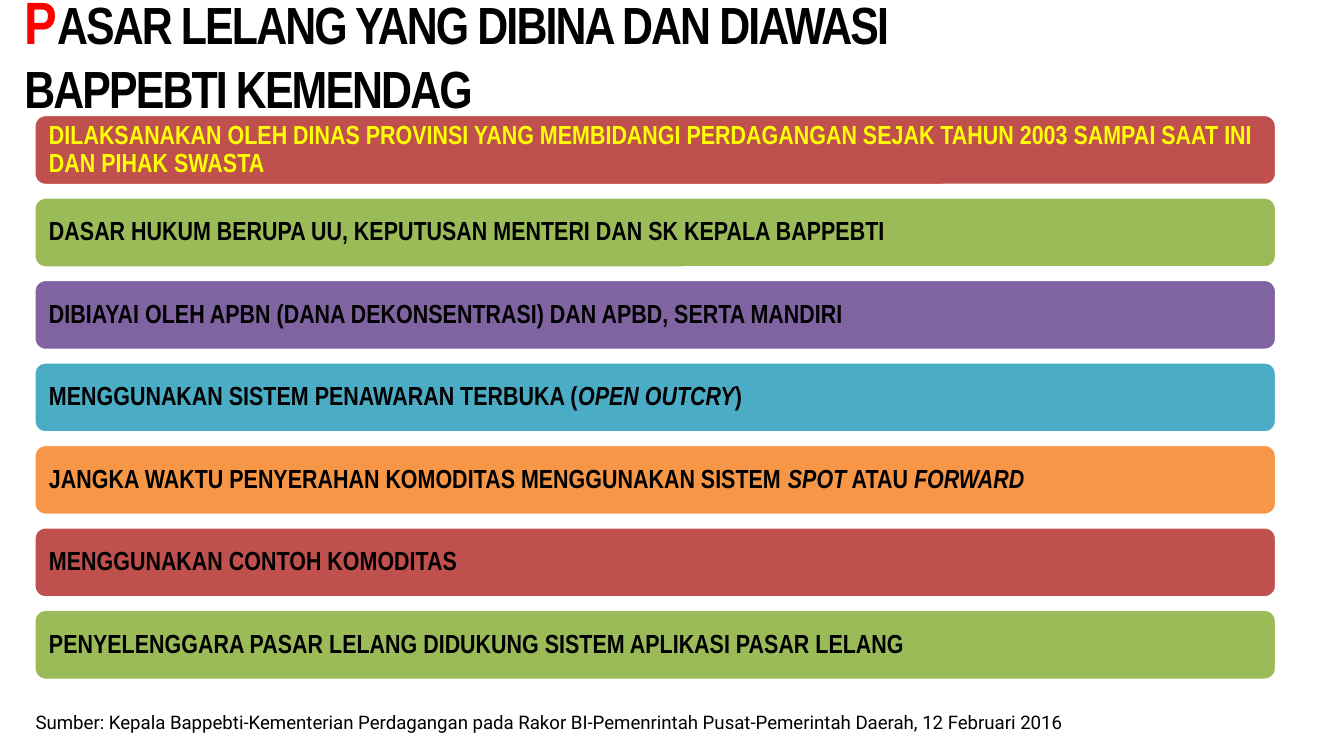
from pptx import Presentation
from pptx.dml.color import RGBColor as Rgb
from pptx.enum.shapes import MSO_SHAPE as Shape
from pptx.enum.text import MSO_ANCHOR as Anchor, PP_ALIGN as Align
from pptx.util import Pt

THEME = {
    "head": "Arial Narrow", "note": "Roboto",
    "big": 32, "title": 28, "bar": 14, "small": 10,
    "black": "000000", "white": "FFFFFF", "red": "FF0000", "yellow": "FFFF00",
    "brick": "C0504D", "green": "9BBB59", "purple": "8064A2",
    "teal": "4BACC6", "orange": "F79646",
}

TITLE = [
    ("P", "big", "red"),
    ("ASAR LELANG YANG DIBINA DAN DIAWASI BAPPEBTI KEMENDAG", "title", "black"),
]
BARS = [
    ("brick", "yellow", [("DILAKSANAKAN OLEH DINAS PROVINSI YANG MEMBIDANGI PERDAGANGAN "
                          "SEJAK TAHUN 2003 SAMPAI SAAT INI DAN PIHAK SWASTA", False)]),
    ("green", "black", [("DASAR HUKUM BERUPA UU, KEPUTUSAN MENTERI DAN SK KEPALA BAPPEBTI", False)]),
    ("purple", "black", [("DIBIAYAI OLEH APBN (DANA DEKONSENTRASI) DAN APBD, SERTA MANDIRI", False)]),
    ("teal", "black", [("MENGGUNAKAN SISTEM PENAWARAN TERBUKA (", False),
                       ("OPEN OUTCRY", True), (")", False)]),
    ("orange", "black", [("JANGKA WAKTU PENYERAHAN KOMODITAS MENGGUNAKAN SISTEM ", False),
                         ("SPOT", True), (" ATAU ", False), ("FORWARD", True)]),
    ("brick", "black", [("MENGGUNAKAN CONTOH KOMODITAS", False)]),
    ("green", "black", [("PENYELENGGARA PASAR LELANG DIDUKUNG SISTEM APLIKASI PASAR LELANG", False)]),
]
SOURCE = ("Sumber: Kepala Bappebti-Kementerian Perdagangan pada Rakor "
          "BI-Pemenrintah Pusat-Pemerintah Daerah, 12 Februari 2016")

LEFT, TOP, WIDE, HIGH, STEP, PAD = 18, 61.2, 666, 38.3, 44.18, 6.4


def color(name):
    return Rgb.from_string(THEME[name])


def add_run(para, text, size, tint, face="head", bold=True, slant=False):
    run = para.add_run()
    run.text = text
    font = run.font
    font.name, font.size = THEME[face], Pt(THEME[size])
    font.bold, font.italic = bold, slant
    font.color.rgb = color(tint)
    return run


def add_box(slide, left, top, wide, high):
    frame = slide.shapes.add_textbox(Pt(left), Pt(top), Pt(wide), Pt(high)).text_frame
    frame.word_wrap = True
    return frame


def add_bar(slide, top, fill, tint, parts):
    bar = slide.shapes.add_shape(Shape.ROUNDED_RECTANGLE, Pt(LEFT), Pt(top), Pt(WIDE), Pt(HIGH))
    bar.shadow.inherit = False
    bar.fill.solid()
    bar.fill.fore_color.rgb = color(fill)
    bar.line.color.rgb = color("white")
    bar.line.width = Pt(2.08)
    frame = bar.text_frame
    frame.word_wrap = True
    frame.vertical_anchor = Anchor.MIDDLE
    frame.margin_left = frame.margin_right = Pt(PAD)
    frame.margin_top = frame.margin_bottom = Pt(PAD)
    para = frame.paragraphs[0]
    para.alignment = Align.LEFT
    para.line_spacing = 0.9
    for text, slant in parts:
        add_run(para, text, "bar", tint, slant=slant)


def main():
    deck = Presentation()
    deck.slide_width, deck.slide_height = Pt(720), Pt(405)
    slide = deck.slides.add_slide(deck.slide_layouts[6])

    title = add_box(slide, 6, 3, 576, 50)
    title.vertical_anchor = Anchor.MIDDLE
    for text, size, tint in TITLE:
        run = add_run(title.paragraphs[0], text, size, tint)
        run.font._element.set("spc", "-100")

    for row, (fill, tint, parts) in enumerate(BARS):
        add_bar(slide, TOP + row * STEP, fill, tint, parts)

    note = add_box(slide, 12, 377.3, 722, 19.4)
    add_run(note.paragraphs[0], SOURCE, "small", "black", "note", bold=False)
    deck.save("out.pptx")


if __name__ == "__main__":
    main()
